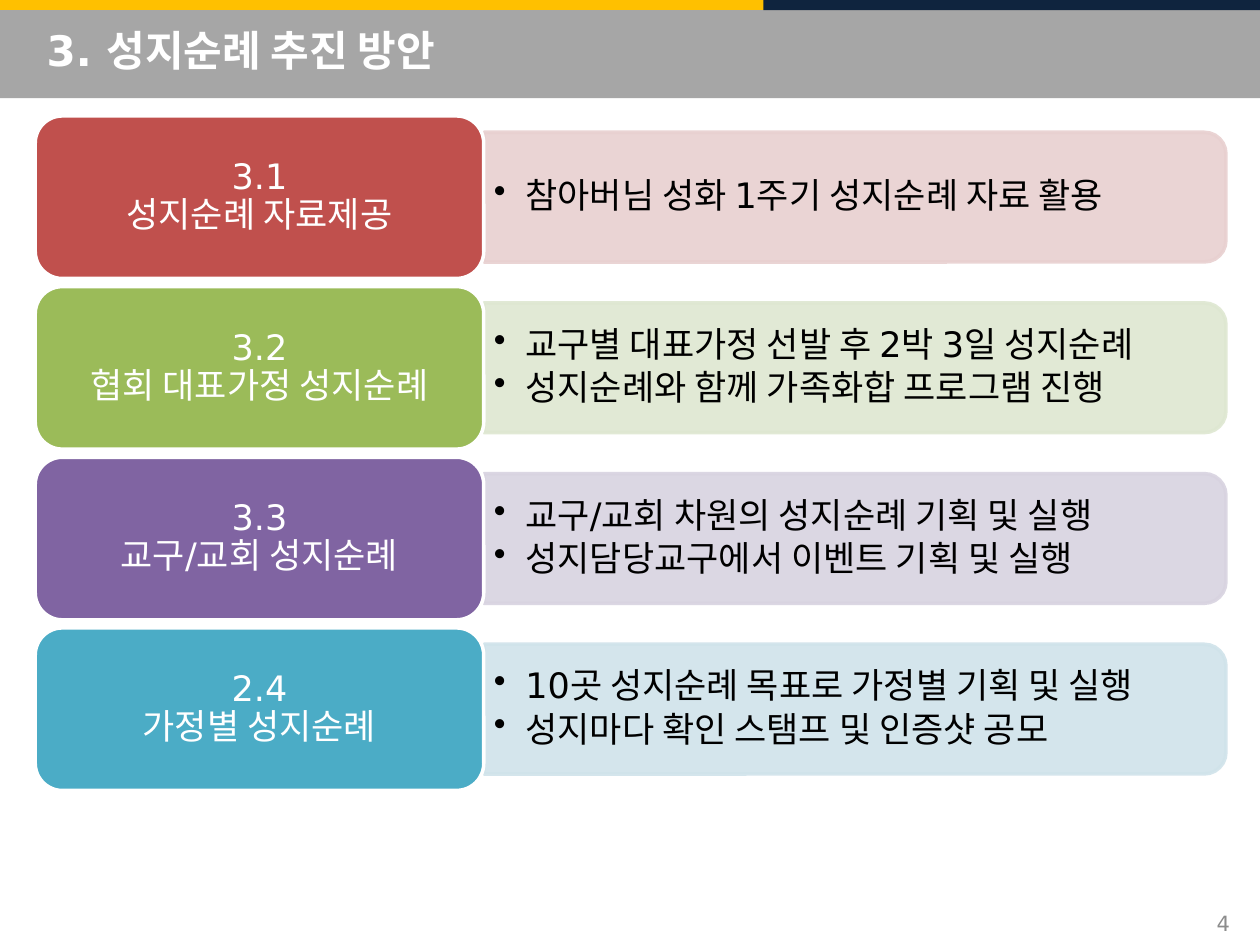
from lxml.etree import SubElement
from pptx import Presentation
from pptx.dml.color import RGBColor
from pptx.enum.shapes import MSO_SHAPE as Shape
from pptx.enum.text import MSO_ANCHOR as Anchor, PP_ALIGN as Align
from pptx.oxml.ns import qn
from pptx.util import Inches, Pt

# Content
TITLE = "3. 성지순례 추진 방안"
PAGE_NUMBER = "4"
PLANS = [  # label, label colour, panel colour, points
    ("3.1\v성지순례 자료제공", "C0504D", "E8D0D0",
     ["참아버님 성화 1주기 성지순례 자료 활용"]),
    ("3.2\v협회 대표가정 성지순례", "9BBB59", "DEE7D1",
     ["교구별 대표가정 선발 후 2박 3일 성지순례", "성지순례와 함께 가족화합 프로그램 진행"]),
    ("3.3\v교구/교회 성지순례", "8064A2", "D8D3E0",
     ["교구/교회 차원의 성지순례 기획 및 실행", "성지담당교구에서 이벤트 기획 및 실행"]),
    ("2.4\v가정별 성지순례", "4BACC6", "D0E3EA",
     ["10곳 성지순례 목표로 가정별 기획 및 실행", "성지마다 확인 스탬프 및 인증샷 공모"]),
]
BANDS = [  # left, top, width, height, colour
    (0, 0, 10, 0.08, "FFC000"),
    (0, 0.08, 10, 0.7, "A6A6A6"),
    (6.06, 0, 3.94, 0.08, "0F243E"),
]


class Theme:
    font = "DejaVu Sans"
    white, black, muted = "FFFFFF", "000000", "8C8C8C"
    title_size, body_size, number_size = 24, 20, 12
    line_width = 2
    panel_opacity = 90


# Row geometry, in inches
ROW_LEFT, ROW_TOP = 0.28, 0.92
LABEL_WIDTH, LABEL_HEIGHT = 3.56, 1.29
ROW_PITCH = LABEL_HEIGHT * 1.05
PANEL_LEFT = ROW_LEFT + LABEL_WIDTH
PANEL_WIDTH, PANEL_HEIGHT = 5.89, 1.03
POINTS_WIDTH, POINTS_HEIGHT = 5.84, 0.93


def box(left, top, width, height):
    return [Inches(value) for value in (left, top, width, height)]


def add_filled(preset, place, fill, line=None):
    shape = slide.shapes.add_shape(preset, *box(*place))
    shape.shadow.inherit = False
    shape.fill.solid()
    shape.fill.fore_color.rgb = RGBColor.from_string(fill)
    if line:
        shape.line.color.rgb = RGBColor.from_string(line)
        shape.line.width = Pt(Theme.line_width)
    else:
        shape.line.fill.background()
    return shape


def set_font(paragraph, size, color, bold=False):
    font = paragraph.font
    font.name, font.size, font.bold = Theme.font, Pt(size), bold
    font.color.rgb = RGBColor.from_string(color)


def set_frame(frame, tight=True):
    frame.word_wrap = True
    frame.vertical_anchor = Anchor.MIDDLE
    if tight:
        frame.margin_left = frame.margin_right = Inches(0.08)
        frame.margin_top = frame.margin_bottom = Inches(0.04)


def add_bullet(paragraph):
    properties = paragraph._p.get_or_add_pPr()
    properties.set("marL", str(Inches(0.25)))
    properties.set("indent", str(Inches(-0.25)))
    SubElement(properties, qn("a:buChar")).set("char", "•")


def add_panel(middle, color):
    # Turned a quarter so that the rounded corners face right
    center = PANEL_LEFT + PANEL_WIDTH / 2
    place = (center - PANEL_HEIGHT / 2, middle - PANEL_WIDTH / 2, PANEL_HEIGHT, PANEL_WIDTH)
    panel = add_filled(Shape.ROUND_2_SAME_RECTANGLE, place, color, color)
    panel.rotation = 90
    for tint in panel._element.spPr.iter(qn("a:srgbClr")):
        SubElement(tint, qn("a:alpha")).set("val", str(Theme.panel_opacity * 1000))


def add_points(middle, points):
    frame = slide.shapes.add_textbox(
        *box(PANEL_LEFT, middle - POINTS_HEIGHT / 2, POINTS_WIDTH, POINTS_HEIGHT)).text_frame
    set_frame(frame)
    frame.text = "\n".join(points)
    for paragraph in frame.paragraphs:
        paragraph.level = 1
        paragraph.line_spacing = 0.9
        paragraph.space_after = Pt(3)
        add_bullet(paragraph)
        set_font(paragraph, Theme.body_size, Theme.black)


def add_label(top, text, color):
    label = add_filled(Shape.ROUNDED_RECTANGLE,
                       (ROW_LEFT, top, LABEL_WIDTH, LABEL_HEIGHT), color, Theme.white)
    set_frame(label.text_frame)
    paragraph = label.text_frame.paragraphs[0]
    paragraph.text = text
    paragraph.alignment = Align.CENTER
    paragraph.line_spacing = 0.9
    set_font(paragraph, Theme.body_size, Theme.white)


deck = Presentation()
deck.slide_width, deck.slide_height = Inches(10), Inches(7.5)
slide = deck.slides.add_slide(deck.slide_layouts[5])

# Header bands, with the title in front of them
for *place, color in BANDS:
    add_filled(Shape.RECTANGLE, place, color)
title = slide.shapes.title
slide.shapes._spTree.append(title._element)
title.left, title.top, title.width, title.height = box(0.27, 0.08, 9.27, 0.63)
set_frame(title.text_frame, tight=False)
heading = title.text_frame.paragraphs[0]
heading.text = TITLE
heading.alignment = Align.LEFT
set_font(heading, Theme.title_size, Theme.white, bold=True)

# Page number
number_frame = slide.shapes.add_textbox(*box(7.53, 7.13, 2.33, 0.4)).text_frame
set_frame(number_frame, tight=False)
number = number_frame.paragraphs[0]
number.text = PAGE_NUMBER
number.alignment = Align.RIGHT
set_font(number, Theme.number_size, Theme.muted)

# Plan rows
for row, (label_text, label_color, panel_color, points) in enumerate(PLANS):
    top = ROW_TOP + row * ROW_PITCH
    middle = top + LABEL_HEIGHT / 2
    add_panel(middle, panel_color)
    add_points(middle, points)
    add_label(top, label_text, label_color)

deck.save("out.pptx")
